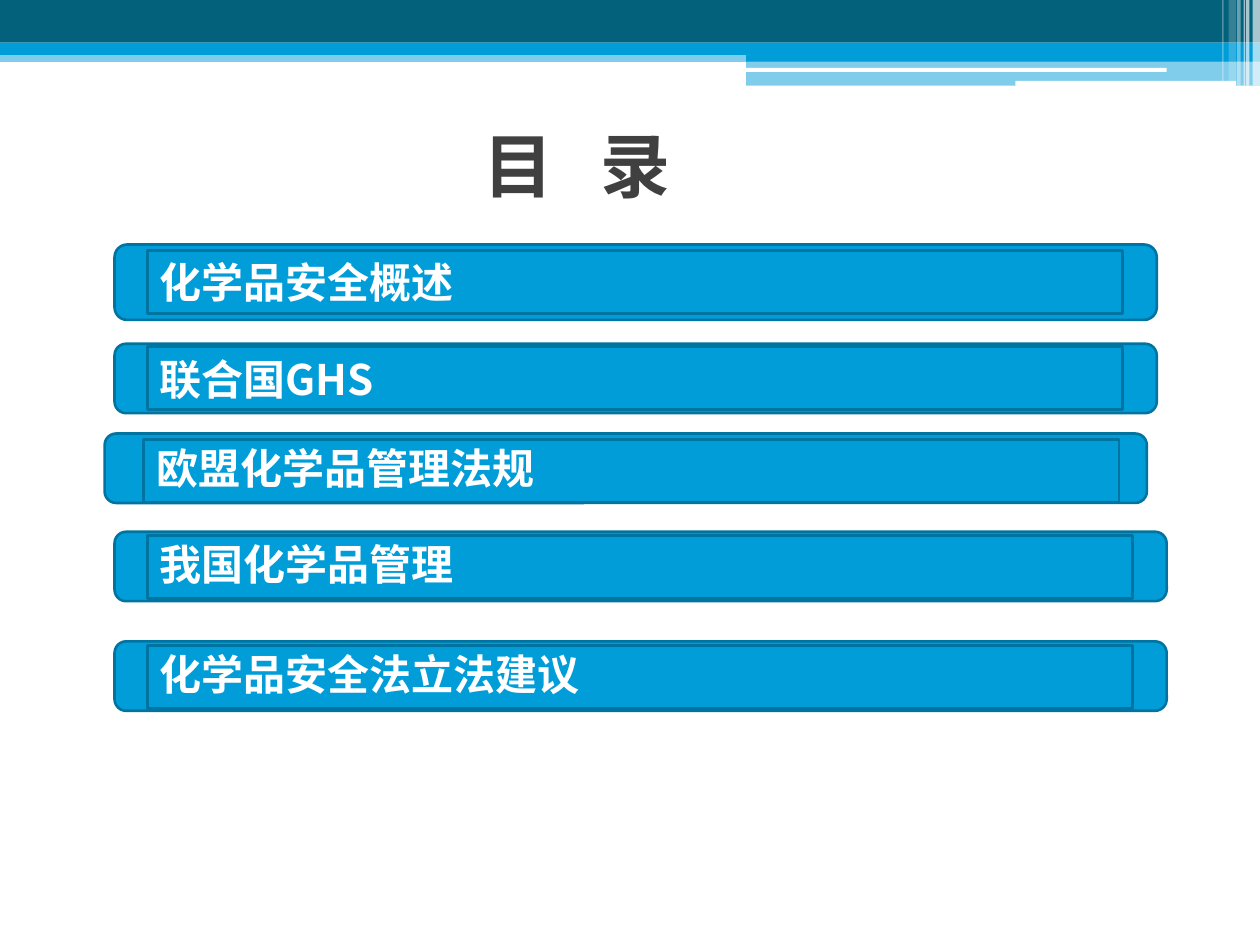
from pptx import Presentation, util as u
from pptx.dml.color import RGBColor
from pptx.enum import shapes, text
from pptx.oxml.ns import qn
from lxml import etree

COLORS = {
    "teal": "04617B",
    "blue": "009DD9",
    "edge": "0074A1",
    "white": "FFFFFF",
    "title": "404040",
}
FONT = "Noto Sans CJK SC"
RECT = shapes.MSO_SHAPE.RECTANGLE
ROUND = shapes.MSO_SHAPE.ROUNDED_RECTANGLE


class Deck:
    def __init__(self):
        self.prs = Presentation()
        self.prs.slide_width, self.prs.slide_height = u.Cm(25.4), u.Cm(19.05)
        self.s = self.prs.slides.add_slide(self.prs.slide_layouts[6])

    def box(self, at, color, kind=RECT, alpha=100, edge=None, parent=None):
        """Add a filled shape; lengths in cm, alpha in percent."""
        sp = (parent or self.s).shapes.add_shape(kind, *map(u.Cm, at))
        sp.shadow.inherit = False
        sp.fill.solid()
        sp.fill.fore_color.rgb = RGBColor.from_string(COLORS[color])
        if alpha < 100:
            clr = sp.fill._xPr.find(qn("a:solidFill"))[0]
            etree.SubElement(clr, qn("a:alpha")).set("val", str(alpha * 1000))
        if edge:
            sp.line.color.rgb = RGBColor.from_string(COLORS[edge])
            sp.line.width = u.Pt(1.5)
        else:
            sp.line.fill.background()
        return sp

    def label(self, sp, words, size, color, line_spacing=None, tracking=0):
        """Put one bold, left-aligned line of text in a shape."""
        tf = sp.text_frame
        tf.text = words
        tf.word_wrap = True
        tf.vertical_anchor = text.MSO_ANCHOR.MIDDLE
        p = tf.paragraphs[0]
        p.alignment = text.PP_ALIGN.LEFT
        p.line_spacing = line_spacing
        r = p.runs[0]
        r.font.size, r.font.bold, r.font.name = u.Pt(size), True, FONT
        r.font.color.rgb = RGBColor.from_string(COLORS[color])
        rPr = r._r.get_or_add_rPr()
        etree.SubElement(rPr, qn("a:ea")).set("typeface", FONT)
        if tracking:
            rPr.set("spc", str(tracking * 100))

    def title(self, at, words):
        sp = self.s.shapes.add_textbox(*map(u.Cm, at))
        self.label(sp, words, 40, "title", tracking=9)

    def entry(self, words, left, top, width, height, dx, dy, line_spacing):
        """Add a rounded bar with an inner text box, as one group."""
        grp = self.s.shapes.add_group_shape()
        self.box((left, top, width, height), "blue", ROUND, edge="edge", parent=grp)
        sp = self.box((left + dx, top + dy, width - 1.35, 1.27), "blue",
                      edge="edge", parent=grp)
        tf = sp.text_frame
        tf.margin_left = tf.margin_right = u.Cm(0.25)
        tf.margin_top = tf.margin_bottom = u.Cm(0.25)
        self.label(sp, words, 24, "white", line_spacing)


def main():
    deck = Deck()

    # Header bands
    for at, color, alpha in [
        ((0, 1.02, 25.4, 0.23), "blue", 50),
        ((0, 0, 25.4, 0.86), "teal", 100),
        ((0, 0.86, 25.4, 0.25), "blue", 100),
        ((15.04, 0.99, 10.36, 0.25), "blue", 100),
        ((15.04, 1.22, 10.36, 0.51), "blue", 50),
    ]:
        deck.box(at, color, alpha=alpha)

    # White rules in the header
    for at in [(15.01, 1.37, 8.51, 0.08), (20.47, 1.63, 4.45, 0.1)]:
        deck.box(at, "white", ROUND)

    # Translucent strips at the right edge
    for left, width, height, alpha in [
        (25.25, 0.15, 1.73, 65),
        (25.12, 0.07, 1.73, 65),
        (25.07, 0.03, 1.73, 60),
        (24.94, 0.07, 1.73, 40),
        (24.77, 0.15, 1.63, 20),
        (24.64, 0.03, 1.63, 30),
    ]:
        deck.box((left, 0, width, height), "white", alpha=alpha)

    # Title
    deck.title((9.5, 2.13, 7.8, 2.39), "目 录")

    # Contents: words, bar left, top, width, height, text box offsets, line spacing
    for row in [
        ("化学品安全概述", 2.31, 4.93, 21.01, 1.52, 0.66, 0.12, None),
        ("联合国GHS", 2.31, 6.93, 21.01, 1.4, 0.66, 0.06, None),
        ("欧盟化学品管理法规", 2.11, 8.74, 21.01, 1.4, 0.79, 0.12, 0.9),
        ("我国化学品管理", 2.31, 10.72, 21.21, 1.4, 0.66, 0.08, 0.9),
        ("化学品安全法立法建议", 2.31, 12.93, 21.21, 1.4, 0.66, 0.08, 0.9),
    ]:
        deck.entry(*row)

    deck.prs.save("out.pptx")


if __name__ == "__main__":
    main()
